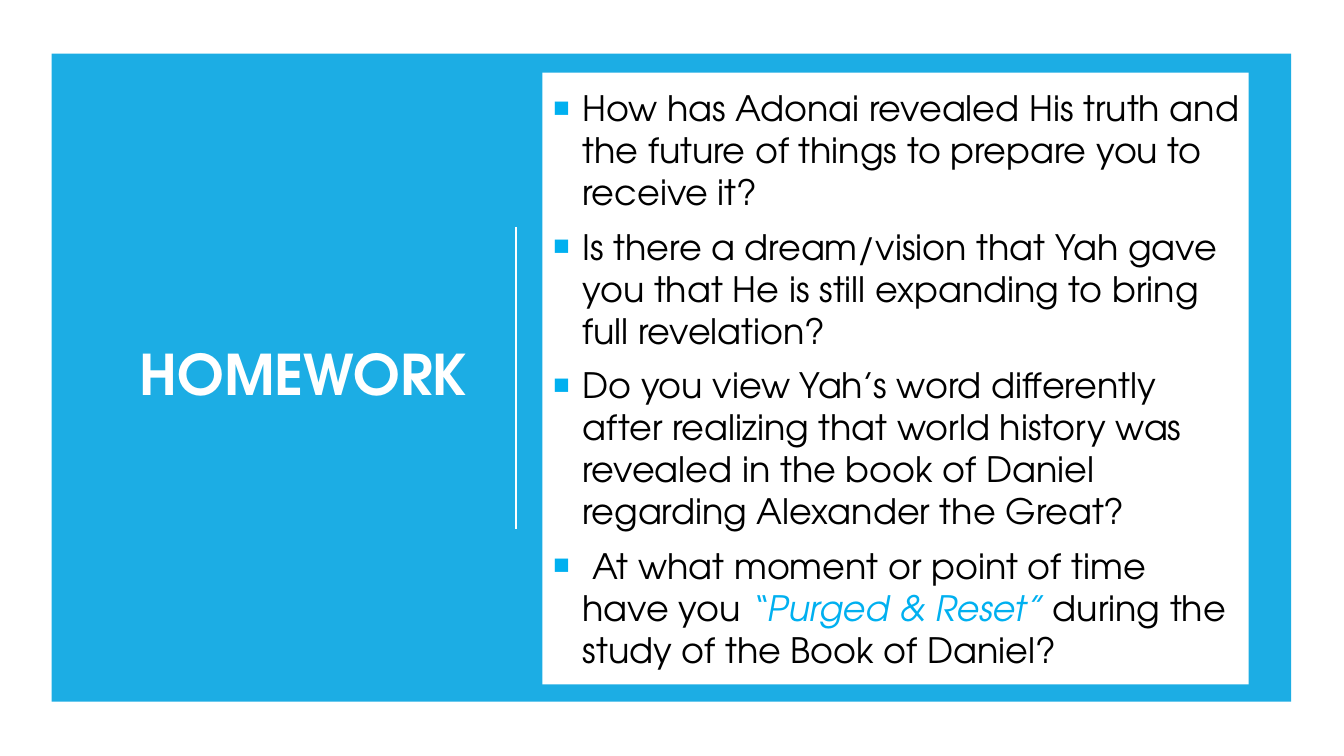
"""Build the homework slide with a blue panel and a card of questions."""
from dataclasses import dataclass

from lxml import etree
from pptx import Presentation
from pptx import util as u
from pptx.dml.color import RGBColor
from pptx.enum import shapes, text
from pptx.oxml.ns import qn

FONT = "TeX Gyre Adventor"
WHITE, BLACK, BLUE, ACCENT = "FFFFFF", "000000", "1CADE4", "00B0F0"
INDENT = u.Cm(0.76)


@dataclass(frozen=True)
class Area:
    left: float
    top: float
    width: float
    height: float

    def lengths(self) -> tuple:
        return tuple(u.Cm(v) for v in (self.left, self.top, self.width, self.height))


@dataclass(frozen=True)
class Span:
    words: str
    color: str = BLACK
    italic: bool = False


PANEL = Area(1.3, 1.35, 31.24, 16.33)
TITLE = Area(1.96, 2.46, 10.08, 14.1)
CARD = Area(13.67, 1.83, 17.8, 15.42)
DIVIDER = Area(13, 5.72, 0, 7.62)

QUESTIONS = [
    [Span("How has Adonai revealed His truth and the future of things to prepare you to receive it?")],
    [Span("Is there a dream/vision that Yah gave you that He is still expanding to bring full revelation?")],
    [Span("Do you view Yah’s word differently after realizing that world history was revealed "
          "in the book of Daniel regarding Alexander the Great?")],
    [Span(" At what moment or point of time have you "),
     Span("“Purged & Reset” ", ACCENT, True),
     Span("during the study of the Book of Daniel?")],
]


def rgb(value: str) -> RGBColor:
    return RGBColor.from_string(value)


def add_text(para, words: str, *, size: float, color: str, bold: bool = False, italic: bool = False) -> None:
    span = para.add_run()
    span.text = words
    font = span.font
    font.name, font.size, font.bold, font.italic = FONT, u.Pt(size), bold, italic
    font.color.rgb = rgb(color)


def add_block(slide, area: Area, color: str):
    block = slide.shapes.add_shape(shapes.MSO_SHAPE.RECTANGLE, *area.lengths())
    block.shadow.inherit = False
    block.fill.solid()
    block.fill.fore_color.rgb = rgb(color)
    block.line.fill.background()
    return block


def add_divider(slide, area: Area) -> None:
    left, top, width, height = area.lengths()
    line = slide.shapes.add_connector(shapes.MSO_CONNECTOR.STRAIGHT, left, top, left + width, top + height)
    line.line.color.rgb = rgb(WHITE)
    line.line.width = u.Pt(1.25)
    etree.SubElement(line._element.spPr, qn("a:effectLst"))


def add_bullet(para) -> None:
    props = para._p.get_or_add_pPr()
    props.set("marL", str(INDENT))
    props.set("indent", str(-INDENT))
    color = etree.SubElement(props, qn("a:buClr"))
    etree.SubElement(color, qn("a:srgbClr"), val=ACCENT)
    etree.SubElement(props, qn("a:buFont"), typeface=FONT)
    etree.SubElement(props, qn("a:buChar"), char="▪")


def fill_title(slide, heading: str) -> None:
    title = slide.shapes.title
    title.left, title.top, title.width, title.height = TITLE.lengths()
    slide.shapes._spTree.append(title._element)
    frame = title.text_frame
    frame.word_wrap = True
    frame.vertical_anchor = text.MSO_ANCHOR.MIDDLE
    para = frame.paragraphs[0]
    para.alignment = text.PP_ALIGN.RIGHT
    para.line_spacing = 0.9
    add_text(para, heading, size=40, color=WHITE, bold=True)


def fill_card(slide, questions: list[list[Span]]) -> None:
    frame = add_block(slide, CARD, WHITE).text_frame
    frame.word_wrap = True
    frame.vertical_anchor = text.MSO_ANCHOR.MIDDLE
    for index, spans in enumerate(questions):
        para = frame.add_paragraph() if index else frame.paragraphs[0]
        para.alignment = text.PP_ALIGN.LEFT
        para.space_before = u.Pt(9)
        add_bullet(para)
        for span in spans:
            add_text(para, span.words, size=25, color=span.color, italic=span.italic)


def main() -> None:
    deck = Presentation()
    deck.slide_width, deck.slide_height = u.Cm(33.87), u.Cm(19.05)
    slide = deck.slides.add_slide(deck.slide_layouts[5])
    add_block(slide, PANEL, BLUE)
    fill_title(slide, "HOMEWORK")
    add_divider(slide, DIVIDER)
    fill_card(slide, QUESTIONS)
    deck.save("out.pptx")


if __name__ == "__main__":
    main()
